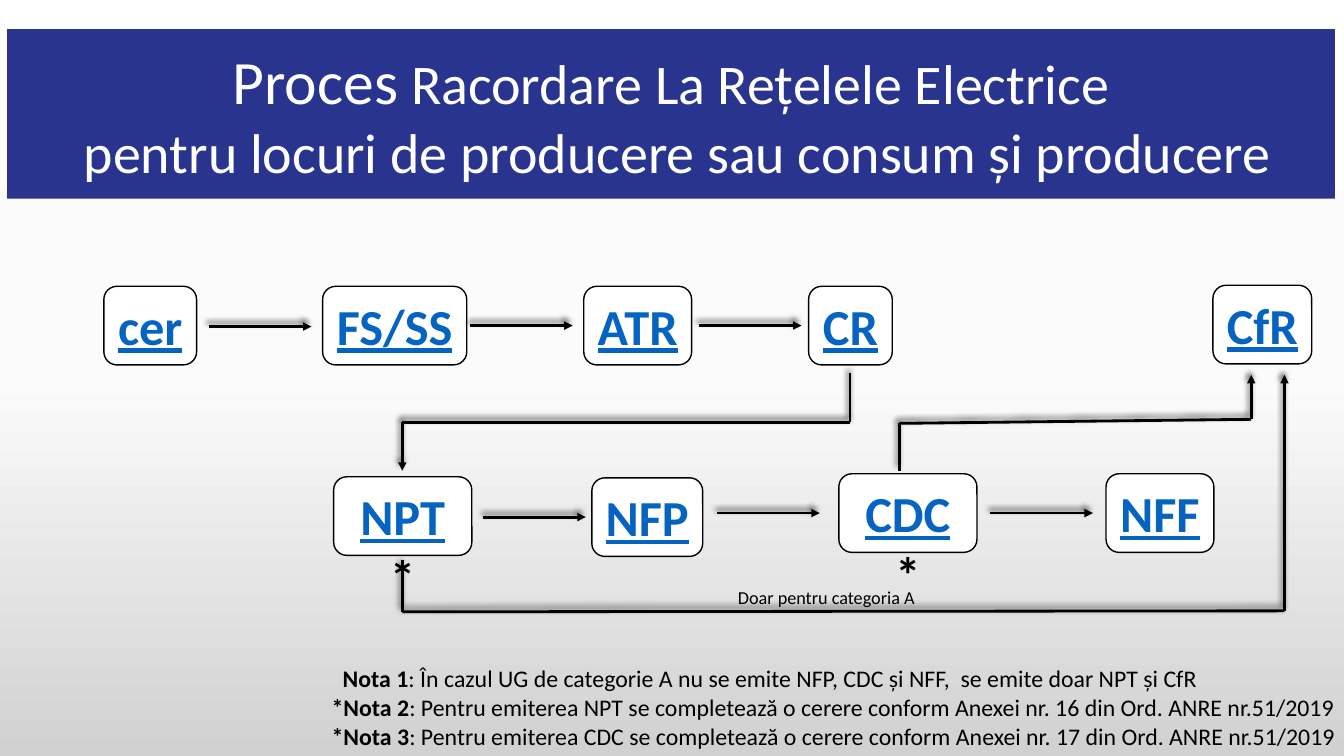
from copy import deepcopy
from itertools import pairwise
from lxml.etree import SubElement
from pptx import Presentation
from pptx.dml.color import RGBColor
from pptx.enum.dml import MSO_LINE
from pptx.enum.shapes import MSO_CONNECTOR, MSO_SHAPE
from pptx.enum.text import MSO_ANCHOR, MSO_AUTO_SIZE, PP_ALIGN
from pptx.oxml import parse_xml
from pptx.oxml.ns import nsdecls, qn
from pptx.util import Inches, Pt

COLORS = {"ink": "000000", "paper": "FFFFFF", "link": "0563C1",
          "banner": "29348F", "mid": "FBFBFB", "base": "D1D1D1"}
FONT = "Calibri"
BOX_H = 0.78
STEP = 1.02


class Board:
    """Holds the slide and the style of its elements."""

    def __init__(self, deck):
        self.slide = deck.slides.add_slide(deck.slide_layouts[5])

    def color(self, name):
        return RGBColor.from_string(COLORS[name])

    def paint(self, *names):
        fill = self.slide.background.fill
        fill.gradient()
        fill.gradient_angle = 270
        first = fill.gradient_stops[0]._gs
        first.addnext(deepcopy(first))
        for i, (stop, name) in enumerate(zip(fill.gradient_stops, names)):
            stop.position = i / (len(names) - 1)
            stop.color.rgb = self.color(name)

    def run(self, par, text, size, color="ink", bold=False, under=False):
        run = par.add_run()
        run.text = text
        font = run.font
        font.name, font.size = FONT, Pt(size)
        font.bold, font.underline = bold, under
        font.color.rgb = self.color(color)

    def title(self, at, lines):
        shape = self.slide.shapes.title
        shape.left, shape.top, shape.width, shape.height = map(Inches, at)
        shape._element.spPr.append(parse_xml(
            f'<a:prstGeom {nsdecls("a")} prst="roundRect"><a:avLst/></a:prstGeom>'))
        shape.fill.solid()
        shape.fill.fore_color.rgb = self.color("banner")
        frame = shape.text_frame
        frame.auto_size = MSO_AUTO_SIZE.NONE
        frame.vertical_anchor = MSO_ANCHOR.MIDDLE
        for i, runs in enumerate(lines):
            par = frame.add_paragraph() if i else frame.paragraphs[0]
            par.alignment = PP_ALIGN.CENTER
            for text, size in runs:
                self.run(par, text, size, "paper")

    def box(self, left, top, width, text, star=False):
        shape = self.slide.shapes.add_shape(
            MSO_SHAPE.ROUNDED_RECTANGLE, *map(Inches, (left, top, width, BOX_H)))
        shape.shadow.inherit = False
        shape.fill.solid()
        shape.fill.fore_color.rgb = self.color("paper")
        shape.line.color.rgb = self.color("ink")
        shape.line.width = Pt(1)
        frame = shape.text_frame
        frame.word_wrap = False
        frame.vertical_anchor = MSO_ANCHOR.TOP
        par = frame.paragraphs[0]
        par.alignment = PP_ALIGN.CENTER
        self.run(par, text, 36, "link", True, True)
        if star:
            par.add_line_break()
            self.run(par, "*", 36, bold=True)

    def line(self, start, end, arrow):
        link = self.slide.shapes.add_connector(
            MSO_CONNECTOR.STRAIGHT, *map(Inches, (*start, *end)))
        link.line.color.rgb = self.color("ink")
        link.line.width = Pt(2)
        link.line.dash_style = MSO_LINE.SOLID
        if arrow:
            SubElement(link.line._get_or_add_ln(), qn("a:tailEnd"), type="triangle")
        link._element.spPr.append(parse_xml(
            f'<a:effectLst {nsdecls("a")}><a:outerShdw blurRad="50800" dist="38100" '
            f'dir="14700000" rotWithShape="0"><a:srgbClr val="{COLORS["ink"]}">'
            '<a:alpha val="60000"/></a:srgbClr></a:outerShdw></a:effectLst>'))

    def route(self, *points):
        for start, end in pairwise(points):
            self.line(start, end, end == points[-1])

    def text(self, at, lines, size, wrap=True):
        frame = self.slide.shapes.add_textbox(*map(Inches, at)).text_frame
        frame.word_wrap = wrap
        for i, (head, rest, indent) in enumerate(lines):
            par = frame.add_paragraph() if i else frame.paragraphs[0]
            if indent:
                par._p.get_or_add_pPr().set("marL", str(Inches(indent)))
            if head:
                self.run(par, head, size, bold=True)
            self.run(par, rest, size)


def main():
    deck = Presentation()
    deck.slide_width, deck.slide_height = Inches(13.33), Inches(7.5)
    board = Board(deck)
    board.paint("paper", "mid", "base")
    board.title((0.07, 0.29, 13.17, 1.68), [
        [("Proces", 44), (" Racordare La Rețelele Electrice", 40)],
        [(" pentru locuri de producere sau consum și producere", 40)]])

    for spot in [(1.03, 2.84, 0.92, "cer"), (3.2, 2.84, 1.43, "FS/SS"),
                 (5.79, 2.84, 1.07, "ATR"), (8.02, 2.84, 0.83, "CR"),
                 (12.03, 2.83, 0.98, "CfR"), (3.31, 4.73, 1.37, "NPT", True),
                 (5.87, 4.74, 1.1, "NFP"), (8.32, 4.7, 1.37, "CDC", True),
                 (10.97, 4.7, 1.07, "NFF")]:
        board.box(*spot)

    for x, y in [(2.07, 3.24), (4.66, 3.23), (6.93, 3.23),
                 (4.79, 5.13), (7.11, 5.09), (9.82, 5.09)]:
        board.route((x, y), (x + STEP, y))
    board.route((8.43, 3.7), (8.43, 4.19), (3.99, 4.19), (3.99, 4.67))
    board.route((8.92, 4.67), (8.92, 4.2), (12.41, 4.16), (12.41, 3.72))
    board.route((3.99, 5.6), (3.99, 6.07), (12.74, 6.06), (12.74, 3.72))

    board.text((7.22, 5.77, 1.98, 0.32),
               [("", "Doar pentru categoria A", 0)], 13, False)
    form = ": Pentru emiterea {} se completează o cerere conform Anexei nr. {} din Ord. ANRE nr.51/2019"
    board.text((3.19, 6.54, 10.17, 0.96), [
        ("Nota 1", ": În cazul UG de categorie A nu se emite NFP, CDC și NFF,  se emite doar NPT și CfR", 0.11),
        ("*Nota 2", form.format("NPT", 16), 0),
        ("*Nota 3", form.format("CDC", 17), 0)], 17)
    deck.save("out.pptx")


if __name__ == "__main__":
    main()
